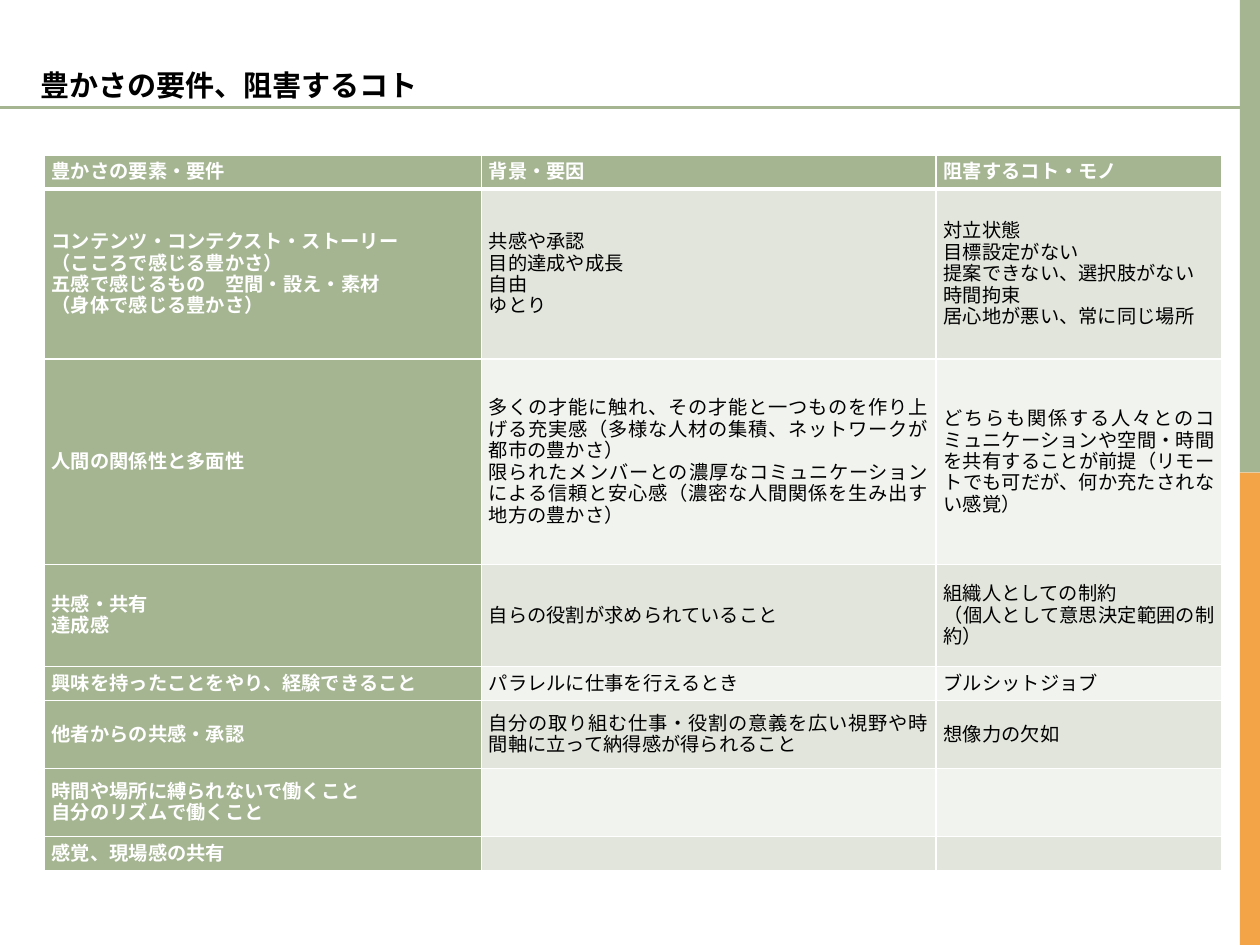
"""Build a slide with a table of what makes life rich and what hinders it."""
from lxml.etree import SubElement
from pptx import Presentation
from pptx.dml.color import RGBColor
from pptx.enum.lang import MSO_LANGUAGE_ID as Language
from pptx.enum.shapes import MSO_CONNECTOR as Connector, MSO_SHAPE as Shape
from pptx.enum.text import MSO_ANCHOR as Anchor, MSO_AUTO_SIZE as AutoSize, PP_ALIGN as Align
from pptx.oxml.ns import qn
from pptx.util import Inches, Pt

COLORS = {
    "green": "A5B592",
    "orange": "F3A447",
    "band_dark": "E1E5DC",
    "band_light": "F0F3EE",
    "white": "FFFFFF",
    "black": "000000",
}
WIDTH, HEIGHT = Inches(10), Inches(7.5)
COLUMNS = [3.47, 3.61, 2.27]
ROWS = [0.27, 1.35, 1.63, 0.81, 0.27, 0.54, 0.54, 0.27]
TITLE = "豊かさの要件、阻害するコト"
CONTENT = [
    ["豊かさの要素・要件", "背景・要因", "阻害するコト・モノ"],
    [
        "コンテンツ・コンテクスト・ストーリー\n（こころで感じる豊かさ）\n"
        "五感で感じるもの　空間・設え・素材\n（身体で感じる豊かさ）",
        "共感や承認\n目的達成や成長\n自由\nゆとり",
        "対立状態\n目標設定がない\n提案できない、選択肢がない\n時間拘束\n居心地が悪い、常に同じ場所",
    ],
    [
        "人間の関係性と多面性",
        "多くの才能に触れ、その才能と一つものを作り上げる充実感"
        "（多様な人材の集積、ネットワークが都市の豊かさ）\n"
        "限られたメンバーとの濃厚なコミュニケーションによる信頼と安心感"
        "（濃密な人間関係を生み出す地方の豊かさ）",
        "どちらも関係する人々とのコミュニケーションや空間・時間を共有することが前提"
        "（リモートでも可だが、何か充たされない感覚）",
    ],
    ["共感・共有\n達成感", "自らの役割が求められていること",
     "組織人としての制約\n（個人として意思決定範囲の制約）"],
    ["興味を持ったことをやり、経験できること", "パラレルに仕事を行えるとき", "ブルシットジョブ"],
    ["他者からの共感・承認",
     "自分の取り組む仕事・役割の意義を広い視野や時間軸に立って納得感が得られること",
     "想像力の欠如"],
    ["時間や場所に縛られないで働くこと\n自分のリズムで働くこと", "", ""],
    ["感覚、現場感の共有", "", ""],
]


def rgb(name):
    """Return the named colour."""
    return RGBColor.from_string(COLORS[name])


def write(frame, text, size=11, font="Arial", color="black", bold=False, align=Align.JUSTIFY):
    """Write one paragraph for each line of text."""
    for index, line in enumerate(text.split("\n")):
        para = frame.add_paragraph() if index else frame.paragraphs[0]
        para.alignment = align
        if not line:
            para._p.get_or_add_endParaRPr().set("sz", str(size * 100))
            continue
        span = para.add_run()
        span.text = line
        span.font.size, span.font.bold, span.font.name = Pt(size), bold, font
        span.font.language_id = Language.JAPANESE
        span.font.color.rgb = rgb(color)
        SubElement(span.font._element, qn("a:ea"), typeface=font)


def add_bar(page, top, color):
    """Add half of the coloured band on the right edge."""
    width = Inches(0.16)
    bar = page.shapes.add_shape(Shape.RECTANGLE, WIDTH - width, top, width, HEIGHT // 2)
    bar.shadow.inherit = False
    bar.fill.solid()
    bar.fill.fore_color.rgb = rgb(color)
    bar.line.fill.background()


def add_rule(page, top):
    """Add a line across the whole page."""
    rule = page.shapes.add_connector(Connector.STRAIGHT, 0, top, WIDTH, top)
    rule.line.color.rgb = rgb("green")
    rule.line.width = Pt(1.75)
    SubElement(rule._element.spPr, qn("a:effectLst"))


def set_title(page):
    """Place and write the title."""
    box = page.shapes.title
    box.left, box.top, box.width, box.height = map(Inches, (0.22, 0.48, 3.23, 0.38))
    frame = box.text_frame
    frame.word_wrap = False
    frame.auto_size = AutoSize.SHAPE_TO_FIT_TEXT
    frame.vertical_anchor = Anchor.MIDDLE
    write(frame, TITLE, size=16.6, font="Noto Sans CJK JP", bold=True, align=Align.LEFT)


def set_borders(cell, **widths):
    """Draw white cell borders with widths in points."""
    for side in "LRTB":
        edge = SubElement(cell._tc.get_or_add_tcPr(), qn(f"a:ln{side}"),
                          w=str(Pt(widths.get(side, 1))))
        fill = SubElement(edge, qn("a:solidFill"))
        SubElement(fill, qn("a:srgbClr"), val=COLORS["white"])


def format_cell(cell, row, column, text):
    """Format and fill one table cell."""
    strong = row == 0 or column == 0
    set_borders(cell, T=3 if row == 1 else 1, B=3 if row == 0 else 1)
    cell.fill.solid()
    band = "band_dark" if row % 2 else "band_light"
    cell.fill.fore_color.rgb = rgb("green" if strong else band)
    cell.margin_left = cell.margin_right = Inches(0.06)
    cell.margin_top = cell.margin_bottom = 0
    cell.vertical_anchor = Anchor.MIDDLE
    write(cell.text_frame, text, color="white" if strong else "black", bold=strong)


def add_table(page):
    """Add the table of conditions, causes and obstacles."""
    table = page.shapes.add_table(
        len(ROWS), len(COLUMNS), Inches(0.35), Inches(1.23),
        Inches(sum(COLUMNS)), Inches(sum(ROWS))).table
    for column, width in zip(table.columns, COLUMNS):
        column.width = Inches(width)
    for row, height in zip(table.rows, ROWS):
        row.height = Inches(height)
    for row, texts in enumerate(CONTENT):
        for column, text in enumerate(texts):
            format_cell(table.cell(row, column), row, column, text)


def main():
    """Build and save the deck."""
    deck = Presentation()
    deck.slide_width, deck.slide_height = WIDTH, HEIGHT
    page = deck.slides.add_slide(deck.slide_layouts[5])
    for index, color in enumerate(("green", "orange")):
        add_bar(page, index * HEIGHT // 2, color)
    add_table(page)
    set_title(page)
    add_rule(page, Inches(0.85))
    deck.save("out.pptx")


if __name__ == "__main__":
    main()
